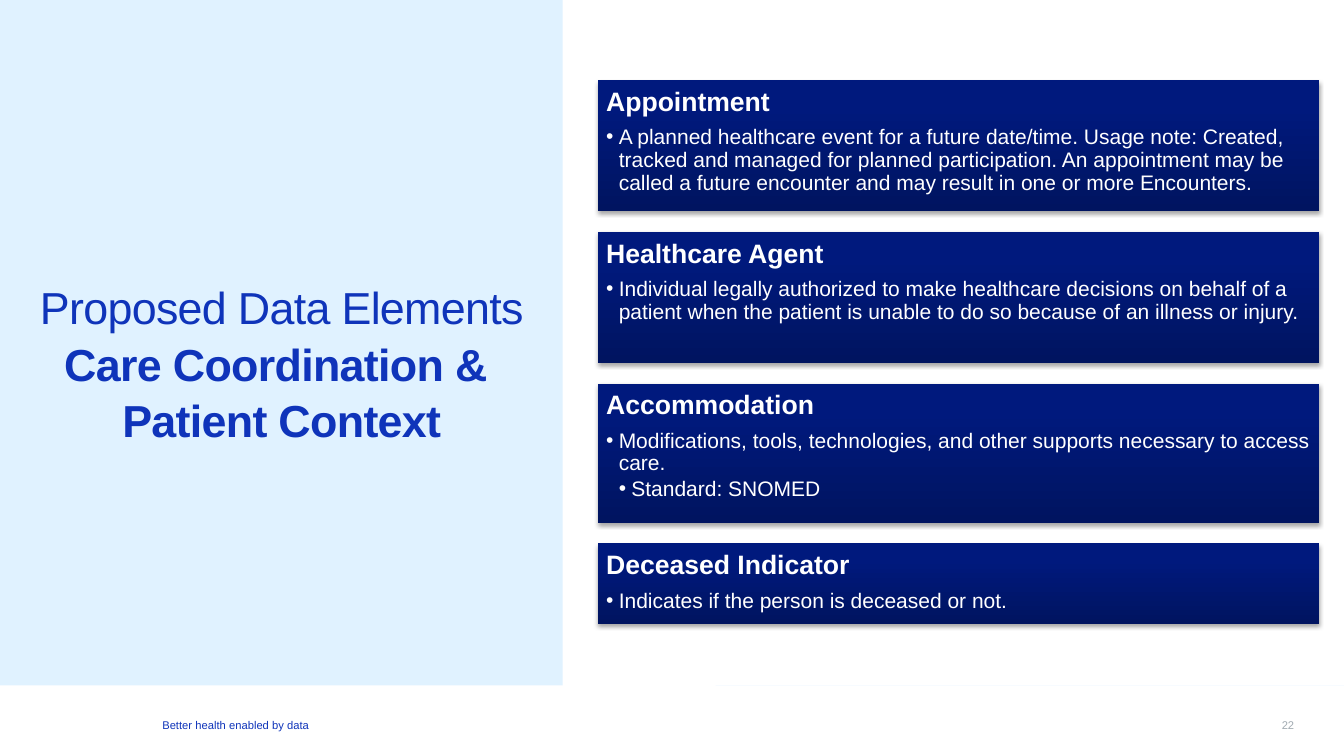
from copy import deepcopy

from lxml.etree import SubElement
from pptx import Presentation
from pptx.dml.color import RGBColor
from pptx.enum.shapes import MSO_SHAPE as Shape
from pptx.enum.text import MSO_ANCHOR as Anchor, PP_ALIGN as Align
from pptx.oxml.ns import qn
from pptx.util import Pt

WHITE = RGBColor(0xFF, 0xFF, 0xFF)
PALE_BLUE = RGBColor(0xE0, 0xF2, 0xFF)
BLUE = RGBColor(0x0F, 0x34, 0xBA)
GREY = RGBColor(0xA1, 0xAA, 0xB1)
CARD_STOPS = [
    (0, RGBColor(0x00, 0x14, 0x60)),
    (0.8, RGBColor(0x00, 0x19, 0x7D)),
    (1, RGBColor(0x00, 0x1A, 0x7E)),
]

CARD_LEFT, CARD_TOP, CARD_WIDTH, CARD_GAP = 427, 57.2, 515.5, 14.8
INDENT = 9
CARDS = [
    (93.6, "Appointment", [
        (1, "A planned healthcare event for a future date/time. Usage note: Created, "
            "tracked and managed for planned participation. An appointment may be "
            "called a future encounter and may result in one or more Encounters."),
    ]),
    (93.6, "Healthcare Agent", [
        (1, "Individual legally authorized to make healthcare decisions on behalf of a "
            "patient when the patient is unable to do so because of an illness or injury."),
    ]),
    (99.4, "Accommodation", [
        (1, "Modifications, tools, technologies, and other supports necessary to access care."),
        (2, "Standard: SNOMED"),
    ]),
    (57.6, "Deceased Indicator", [
        (1, "Indicates if the person is deceased or not."),
    ]),
]


def add_panel(page, left, top, width, height):
    panel = page.shapes.add_shape(Shape.RECTANGLE, Pt(left), Pt(top), Pt(width), Pt(height))
    panel.shadow.inherit = False
    panel.fill.solid()
    panel.fill.fore_color.rgb = WHITE
    panel.line.fill.background()
    return panel


def set_frame(box, inset, anchor):
    frame = box.text_frame
    frame.word_wrap = True
    frame.vertical_anchor = anchor
    frame.margin_left = frame.margin_right = Pt(inset)
    frame.margin_top = frame.margin_bottom = Pt(inset)
    return frame


def add_text(para, text, size=15, color=WHITE, bold=False, align=Align.LEFT,
             line_spacing=0.9, space_after=0, tracking=None):
    para.alignment = align
    para.line_spacing = line_spacing
    para.space_after = Pt(space_after)
    for index, line in enumerate(text.split("\n")):
        if index:
            para.add_line_break()
        span = para.add_run()
        span.text = line
        span.font.name = "Arial"
        span.font.size = Pt(size)
        span.font.bold = bold
        span.font.color.rgb = color
        if tracking:
            span.font._element.set("spc", str(int(tracking * 100)))


def add_box(page, left, top, width, height):
    box = page.shapes.add_textbox(Pt(left), Pt(top), Pt(width), Pt(height))
    return set_frame(box, 0, Anchor.BOTTOM).paragraphs[0]


def set_bullet(para, level):
    props = para._p.get_or_add_pPr()
    props.set("marL", str(Pt(INDENT * level)))
    props.set("indent", str(-Pt(INDENT)))
    SubElement(props, qn("a:buFont"), typeface="Arial")
    SubElement(props, qn("a:buChar"), char="•")


def set_gradient(card):
    card.fill.gradient()
    card.fill.gradient_angle = 90
    stop_list = card._element.spPr.find(".//" + qn("a:gsLst"))
    stop_list.append(deepcopy(stop_list[-1]))
    for stop, (position, color) in zip(card.fill.gradient_stops, CARD_STOPS):
        stop.position = position
        stop.color.rgb = color


def set_shadow(card):
    effects = card._element.spPr.find(qn("a:effectLst"))
    shadow = SubElement(effects, qn("a:outerShdw"), blurRad=str(Pt(3.1)),
                        dist=str(Pt(1.8)), dir="5400000", rotWithShape="0")
    color = SubElement(shadow, qn("a:srgbClr"), val="000000")
    SubElement(color, qn("a:alpha"), val="35000")


def add_card(page, top, height, heading, bullets):
    card = add_panel(page, CARD_LEFT, top, CARD_WIDTH, height)
    set_gradient(card)
    set_shadow(card)
    frame = set_frame(card, 6, Anchor.TOP)
    add_text(frame.paragraphs[0], heading, size=19, bold=True, space_after=6.65)
    for level, text in bullets:
        para = frame.add_paragraph()
        para.level = level
        set_bullet(para, level)
        add_text(para, text, space_after=2.25)


def main():
    deck = Presentation()
    deck.slide_width, deck.slide_height = Pt(960), Pt(540)
    page = deck.slides.add_slide(deck.slide_layouts[6])
    page.background.fill.solid()
    page.background.fill.fore_color.rgb = PALE_BLUE

    add_panel(page, 0, 489.6, 960, 50.4)
    add_panel(page, 493.2, 0, 466.8, 489.6)
    add_panel(page, 401.8, 0, 109.4, 503.3)

    add_text(add_box(page, 902.9, 496.1, 21.6, 26.6), "22",
             size=8, color=GREY, align=Align.RIGHT)
    add_text(add_box(page, 115.9, 496.1, 346.3, 26.6), "Better health enabled by data",
             size=8, color=BLUE)

    title = add_box(page, 24.5, 200.2, 353.5, 118.8)
    style = dict(size=32, color=BLUE, align=Align.CENTER, line_spacing=1.05, tracking=-0.5)
    add_text(title, "Proposed Data Elements", **style)
    title.add_line_break()
    add_text(title, "Care Coordination & \nPatient Context", bold=True, **style)

    top = CARD_TOP
    for height, heading, bullets in CARDS:
        add_card(page, top, height, heading, bullets)
        top += height + CARD_GAP

    deck.save("out.pptx")


if __name__ == "__main__":
    main()
